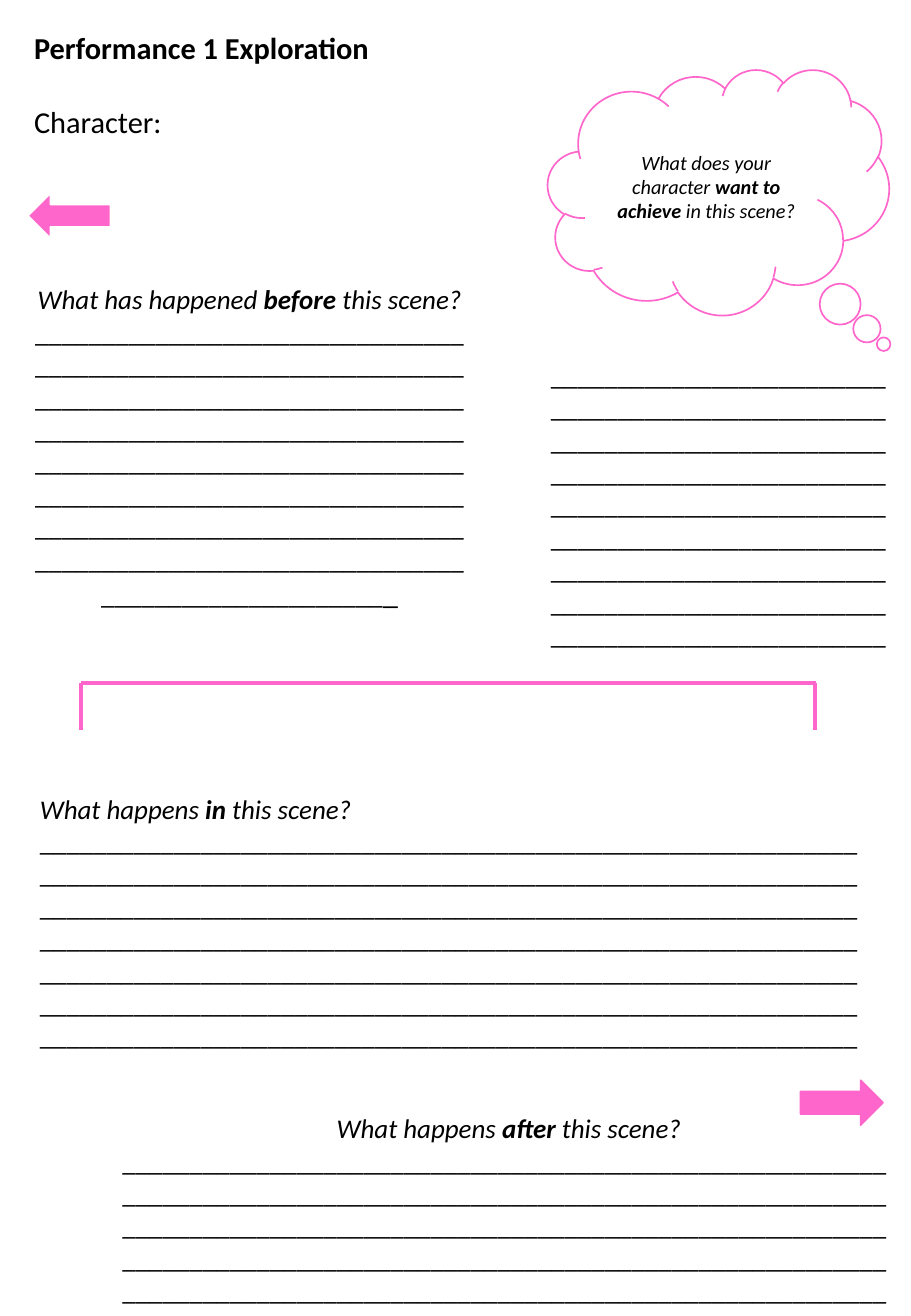
"""Build the one-page scene exploration worksheet."""
import pptx
import pptx.dml.color
import pptx.enum.shapes
import pptx.enum.text
import pptx.oxml.ns
import pptx.util
from lxml import etree

SHAPE = pptx.enum.shapes.MSO_SHAPE
ALIGN = pptx.enum.text.PP_ALIGN
ANCHOR = pptx.enum.text.MSO_ANCHOR
FIT = pptx.enum.text.MSO_AUTO_SIZE
PX = 9144
PAGE = (750, 1083)
FONT = "Calibri"
PINK, WHITE, BLACK = "FF66CC", "FFFFFF", "000000"
L, C = ALIGN.LEFT, ALIGN.CENTER

TITLE_BOX = (18, 19, 600, 101)
TITLE = [
    (L, [("Performance 1 Exploration", 18, "b")]),
    (L, [("Character:", 18, "")]),
]


def prompt(before, key, after, size=16):
    return [(before, size, "i"), (key, size, "bi"), (after, size, "i")]


def rule(per_line, lines, rest=0):
    return ("_" * (per_line * lines + rest), 16, "")


ANSWERS = [
    ((18, 228, 375, 283), [
        (C, prompt("What has happened ", "before", " this scene?")),
        (C, [rule(32, 8, 21), ("_", 18, "")])]),
    ((23, 647, 704, 226), [
        (L, prompt("What happens ", "in", " this scene?")),
        (L, [rule(62, 6, 55)])]),
    ((91, 910, 656, 199), [
        (C, prompt("What happens ", "after", " this scene?")),
        (L, [rule(57, 5)])]),
    ((440, 290, 303, 252), [(C, [rule(25, 9)])]),
]
ARROWS = [((659, 889, 68, 37), 0, PINK), ((23, 159, 68, 37), 180, WHITE)]
CLOUD_BOX = (451, 57, 281, 202)
CLOUD_TAIL = (0.484, 0.62)
CLOUD = [(C, prompt("What does your character ", "want to achieve ",
                    "in this scene?", 12))]
BRACKET = [(67, 562, 672, 562), (67, 562, 67, 601), (671, 562, 671, 601)]


def emu(lengths):
    return [n * PX for n in lengths]


def rgb(value):
    return pptx.dml.color.RGBColor.from_string(value)


def write(tf, paragraphs):
    tf.word_wrap = True
    for i, (align, runs) in enumerate(paragraphs):
        p = tf.add_paragraph() if i else tf.paragraphs[0]
        p.alignment = align
        for text, size, style in runs:
            r = p.add_run()
            r.text = text
            r.font.name = FONT
            r.font.size = pptx.util.Pt(size)
            r.font.bold = "b" in style
            r.font.italic = "i" in style
            r.font.color.rgb = rgb(BLACK)


def add_shape(s, kind, box, fill, line):
    sp = s.shapes.add_shape(kind, *emu(box))
    sp.shadow.inherit = False
    sp.fill.solid()
    sp.fill.fore_color.rgb = rgb(fill)
    sp.line.color.rgb = rgb(line)
    sp.line.width = pptx.util.Pt(1)
    return sp


def add_line(s, ends):
    line = s.shapes.add_connector(
        pptx.enum.shapes.MSO_CONNECTOR.STRAIGHT, *emu(ends))
    line.line.color.rgb = rgb(PINK)
    line.line.width = pptx.util.Pt(2.25)
    etree.SubElement(line._element.spPr, pptx.oxml.ns.qn("a:effectLst"))


def add_title(s):
    sp = s.shapes.title
    sp.left, sp.top, sp.width, sp.height = emu(TITLE_BOX)
    tf = sp.text_frame
    tf.auto_size = FIT.NONE
    tf.vertical_anchor = ANCHOR.TOP
    write(tf, TITLE)
    tf.paragraphs[1].space_before = pptx.util.Pt(22)


def main():
    prs = pptx.Presentation()
    prs.slide_width, prs.slide_height = emu(PAGE)
    s = prs.slides.add_slide(prs.slide_layouts[5])
    add_title(s)
    for box, paragraphs in ANSWERS:
        tf = s.shapes.add_textbox(*emu(box)).text_frame
        write(tf, paragraphs)
        tf.auto_size = FIT.SHAPE_TO_FIT_TEXT
    for box, turn, line in ARROWS:
        add_shape(s, SHAPE.RIGHT_ARROW, box, PINK, line).rotation = turn
    cloud = add_shape(s, SHAPE.CLOUD_CALLOUT, CLOUD_BOX, WHITE, PINK)
    for i, value in enumerate(CLOUD_TAIL):
        cloud.adjustments[i] = value
    cloud.text_frame.vertical_anchor = ANCHOR.MIDDLE
    write(cloud.text_frame, CLOUD)
    for ends in BRACKET:
        add_line(s, ends)
    prs.save("out.pptx")


if __name__ == "__main__":
    main()
